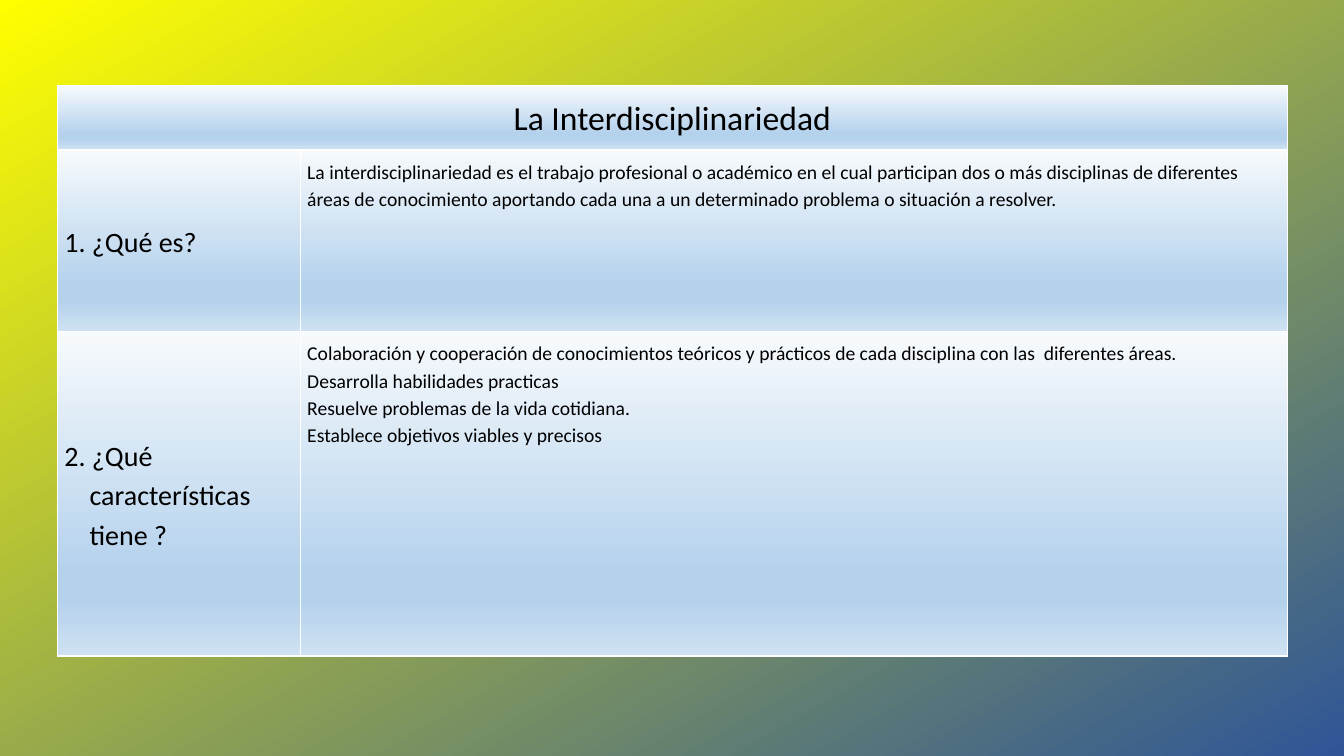
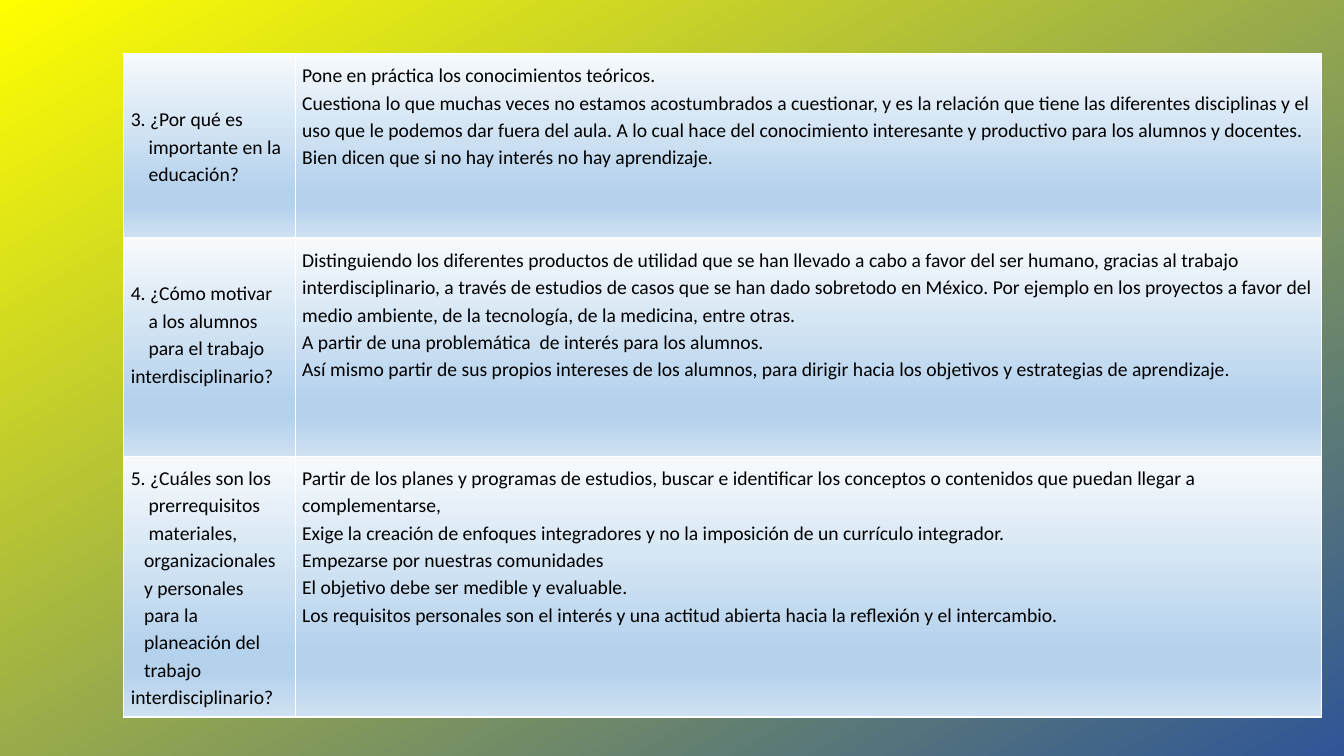
import pptx
import pptx.dml.color
import pptx.enum.text
import pptx.oxml
import pptx.oxml.ns
import pptx.util

Pt = pptx.util.Pt
ALIGN = pptx.enum.text.PP_ALIGN
ANCHOR = pptx.enum.text.MSO_ANCHOR


def color(value):
    return pptx.dml.color.RGBColor.from_string(value)


def gradient(stops, angle):
    """Return a linear gradient fill; stops are (percent, colour), angle is clockwise."""
    stop_list = "".join(
        f'<a:gs pos="{percent * 1000}"><a:srgbClr val="{color(value)}"/></a:gs>'
        for percent, value in stops
    )
    return pptx.oxml.parse_xml(
        f'<a:gradFill {pptx.oxml.ns.nsdecls("a")} rotWithShape="1">'
        f'<a:gsLst>{stop_list}</a:gsLst>'
        f'<a:lin ang="{angle * 60000}" scaled="0"/></a:gradFill>'
    )


def border(side, value, width):
    return pptx.oxml.parse_xml(
        f'<a:ln{side} {pptx.oxml.ns.nsdecls("a")} w="{Pt(width)}">'
        f'<a:solidFill><a:srgbClr val="{color(value)}"/></a:solidFill></a:ln{side}>'
    )


class Deck:
    FONT = "Calibri"
    TEXT = "000000"
    BORDER = "FFFFFF"
    BACKGROUND = [(0, "2F5597"), (100, "FFFF00")]
    CELL = [(0, "F7FAFD"), (74, "B5D2EC"), (83, "B5D2EC"), (100, "CEE1F2")]
    MARGIN = 5
    LINE_SPACING = 1.15

    def __init__(self):
        self.presentation = pptx.Presentation()
        self.presentation.slide_width = Pt(960)
        self.presentation.slide_height = Pt(540)
        self.slide = None
        self.set_background()

    def set_background(self):
        """Give the master the gradient that every slide inherits."""
        master = self.presentation.slide_master
        master.background.fill.gradient()
        fill = master.element.xpath("p:cSld/p:bg/p:bgPr/a:gradFill")[0]
        fill.getparent().replace(fill, gradient(self.BACKGROUND, 240))

    def add_slide(self):
        blank_layout = self.presentation.slide_layouts[6]
        self.slide = self.presentation.slides.add_slide(blank_layout)

    def add_table(self, left, top, widths, heights):
        frame = self.slide.shapes.add_table(
            len(heights), len(widths),
            Pt(left), Pt(top), Pt(sum(widths)), Pt(sum(heights)))
        table = frame.table
        table.first_row = False
        table.horz_banding = False
        for column, width in zip(table.columns, widths):
            column.width = Pt(width)
        for row, height in zip(table.rows, heights):
            row.height = Pt(height)
        for cell in table.iter_cells():
            self.style_cell(cell)
        return table

    def style_cell(self, cell):
        cell.margin_left = cell.margin_right = Pt(self.MARGIN)
        cell.margin_top = cell.margin_bottom = Pt(self.MARGIN)
        properties = cell._tc.get_or_add_tcPr()
        for side in "LRTB":
            properties.append(border(side, self.BORDER, 1))
        properties.append(gradient(self.CELL, 90))

    def fill_cell(self, cell, lines, size=14, align=ALIGN.LEFT):
        """Put text in a cell; each line is a text or an (indent, text) pair."""
        pairs = [(0, line) if isinstance(line, str) else line for line in lines]
        cell.text_frame.text = "\n".join(text for _, text in pairs)
        for paragraph, (indent, _) in zip(cell.text_frame.paragraphs, pairs):
            paragraph.alignment = align
            paragraph.line_spacing = self.LINE_SPACING
            paragraph._p.get_or_add_pPr().set("marL", str(Pt(indent)))
            for run in paragraph.runs:
                run.font.name = self.FONT
                run.font.size = Pt(size)
                run.font.color.rgb = color(self.TEXT)

    def fill_heading(self, table, text):
        """Put a centred heading across the whole first row."""
        cell = table.cell(0, 0)
        cell.merge(table.cell(0, len(table.columns) - 1))
        self.fill_cell(cell, [text], 24, ALIGN.CENTER)

    def fill_row(self, table, row, question, answer, question_size=14):
        question_cell = table.cell(row, 0)
        question_cell.vertical_anchor = ANCHOR.MIDDLE
        self.fill_cell(question_cell, question, question_size)
        self.fill_cell(table.cell(row, 1), answer)


def add_definition_slide(deck):
    deck.add_slide()
    table = deck.add_table(41, 61.2, [173.5, 705], [46, 129.6, 231.8])
    deck.fill_heading(table, "La Interdisciplinariedad")
    deck.fill_row(table, 1, ["1. ¿Qué es?"], [
        "La interdisciplinariedad es el trabajo profesional o académico en el cual "
        "participan dos o más disciplinas de diferentes áreas de conocimiento "
        "aportando cada una a un determinado problema o situación a resolver.",
    ], question_size=20)
    deck.fill_row(table, 2, ["2. ¿Qué", (18, "características"), (18, "tiene ?")], [
        "Colaboración y cooperación de conocimientos teóricos y prácticos de cada "
        "disciplina con las  diferentes áreas.",
        "Desarrolla habilidades practicas",
        "Resuelve problemas de la vida cotidiana.",
        "Establece objetivos viables y precisos",
    ], question_size=20)


def add_education_slide(deck):
    deck.add_slide()
    table = deck.add_table(88.4, 38.2, [122.4, 733], [131.8, 155.8, 185])
    deep, shallow = 12.7, 9.5
    deck.fill_row(table, 0, [
        "3. ¿Por qué es",
        (deep, "importante en la"),
        (deep, "educación?"),
    ], [
        "Pone en práctica los conocimientos teóricos.",
        "Cuestiona lo que muchas veces no estamos acostumbrados a cuestionar, y es la "
        "relación que tiene las diferentes disciplinas y el uso que le podemos dar "
        "fuera del aula. A lo cual hace del conocimiento interesante y productivo para "
        "los alumnos y docentes. Bien dicen que si no hay interés no hay aprendizaje.",
    ])
    deck.fill_row(table, 1, [
        "4. ¿Cómo motivar",
        (deep, "a los alumnos"),
        (deep, "para el trabajo"),
        "interdisciplinario?",
    ], [
        "Distinguiendo los diferentes productos de utilidad que se han llevado a cabo a "
        "favor del ser humano, gracias al trabajo interdisciplinario, a través de "
        "estudios de casos que se han dado sobretodo en México. Por ejemplo en los "
        "proyectos a favor del medio ambiente, de la tecnología, de la medicina, entre "
        "otras.",
        "A partir de una problemática  de interés para los alumnos.",
        "Así mismo partir de sus propios intereses de los alumnos, para dirigir hacia "
        "los objetivos y estrategias de aprendizaje.",
    ])
    table.cell(1, 0).margin_bottom = Pt(deck.MARGIN + 19.6)
    deck.fill_row(table, 2, [
        "5. ¿Cuáles son los",
        (deep, "prerrequisitos"),
        (deep, "materiales,"),
        (shallow, "organizacionales"),
        (shallow, "y personales"),
        (shallow, "para la"),
        (shallow, "planeación del"),
        (shallow, "trabajo"),
        "interdisciplinario?",
    ], [
        "Partir de los planes y programas de estudios, buscar e identificar los "
        "conceptos o contenidos que puedan llegar a complementarse,",
        "Exige la creación de enfoques integradores y no la imposición de un currículo "
        "integrador.",
        "Empezarse por nuestras comunidades",
        "El objetivo debe ser medible y evaluable.",
        "Los requisitos personales son el interés y una actitud abierta hacia la "
        "reflexión y el intercambio.",
    ])


def main():
    deck = Deck()
    add_definition_slide(deck)
    add_education_slide(deck)
    deck.presentation.save("out.pptx")


if __name__ == "__main__":
    main()
